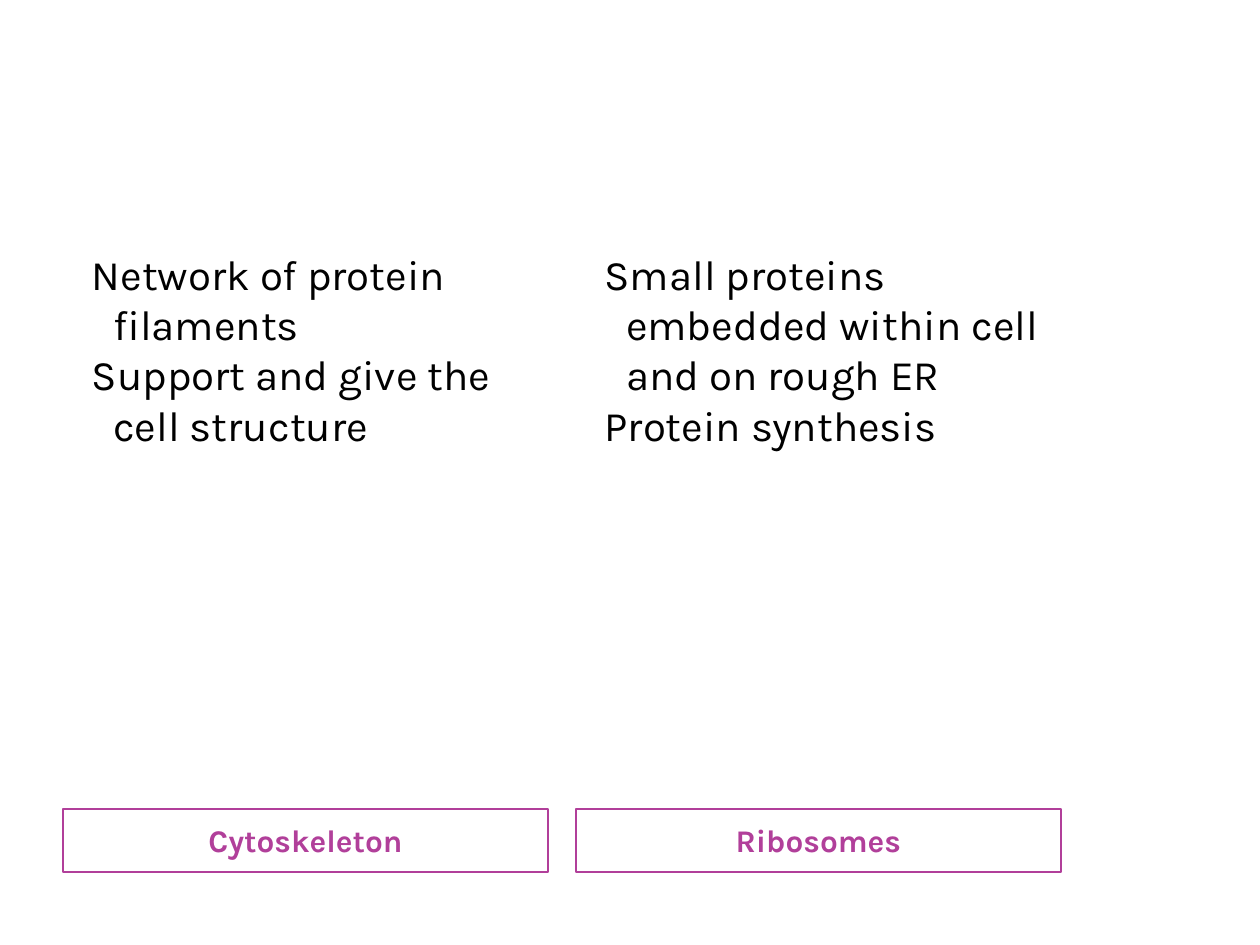
from pptx import Presentation
from pptx.dml.color import RGBColor
from pptx.enum import shapes, text
from pptx.util import Inches, Pt

COLOURS = {"accent": "B13F9A", "body": "000000"}
FONT = "Karla"
COLUMN_WIDTH = 3.85
COLUMNS = [
    (0.5, "Cytoskeleton",
     ["Network of protein filaments", "Support and give the cell structure"]),
    (4.57, "Ribosomes",
     ["Small proteins embedded within cell and on rough ER", "Protein synthesis"]),
]


def set_up_frame(frame, anchor):
    frame.word_wrap = True
    frame.vertical_anchor = anchor
    for side in ("left", "top", "right", "bottom"):
        setattr(frame, f"margin_{side}", Inches(0.1))


def write(para, wording, colour, **font_values):
    span = para.add_run()
    span.text = wording
    span.font.color.rgb = RGBColor.from_string(COLOURS[colour])
    for name, value in font_values.items():
        setattr(span.font, name, value)


deck = Presentation()
deck.slide_width = Inches(10)
deck.slide_height = Inches(7.5)
page = deck.slides.add_slide(deck.slide_layouts[6])

for left, heading, facts in COLUMNS:
    label = page.shapes.add_shape(
        shapes.MSO_SHAPE.RECTANGLE,
        Inches(left), Inches(6.42), Inches(COLUMN_WIDTH), Inches(0.5))
    label.shadow.inherit = False
    label.fill.background()
    label.line.color.rgb = RGBColor.from_string(COLOURS["accent"])
    label.line.width = Pt(1)
    set_up_frame(label.text_frame, text.MSO_ANCHOR.MIDDLE)
    para = label.text_frame.paragraphs[0]
    para.alignment = text.PP_ALIGN.CENTER
    write(para, heading, "accent", name=FONT, size=Pt(18), bold=True)

    box = page.shapes.add_textbox(
        Inches(left), Inches(1.87), Inches(COLUMN_WIDTH), Inches(4.5))
    set_up_frame(box.text_frame, text.MSO_ANCHOR.TOP)
    for index, fact in enumerate(facts):
        para = box.text_frame.add_paragraph() if index else box.text_frame.paragraphs[0]
        hanging = para._p.get_or_add_pPr()
        hanging.set("marL", str(Inches(0.3)))
        hanging.set("indent", str(Inches(-0.17)))
        write(para, fact, "body", name=FONT, size=Pt(24))

deck.save("out.pptx")
